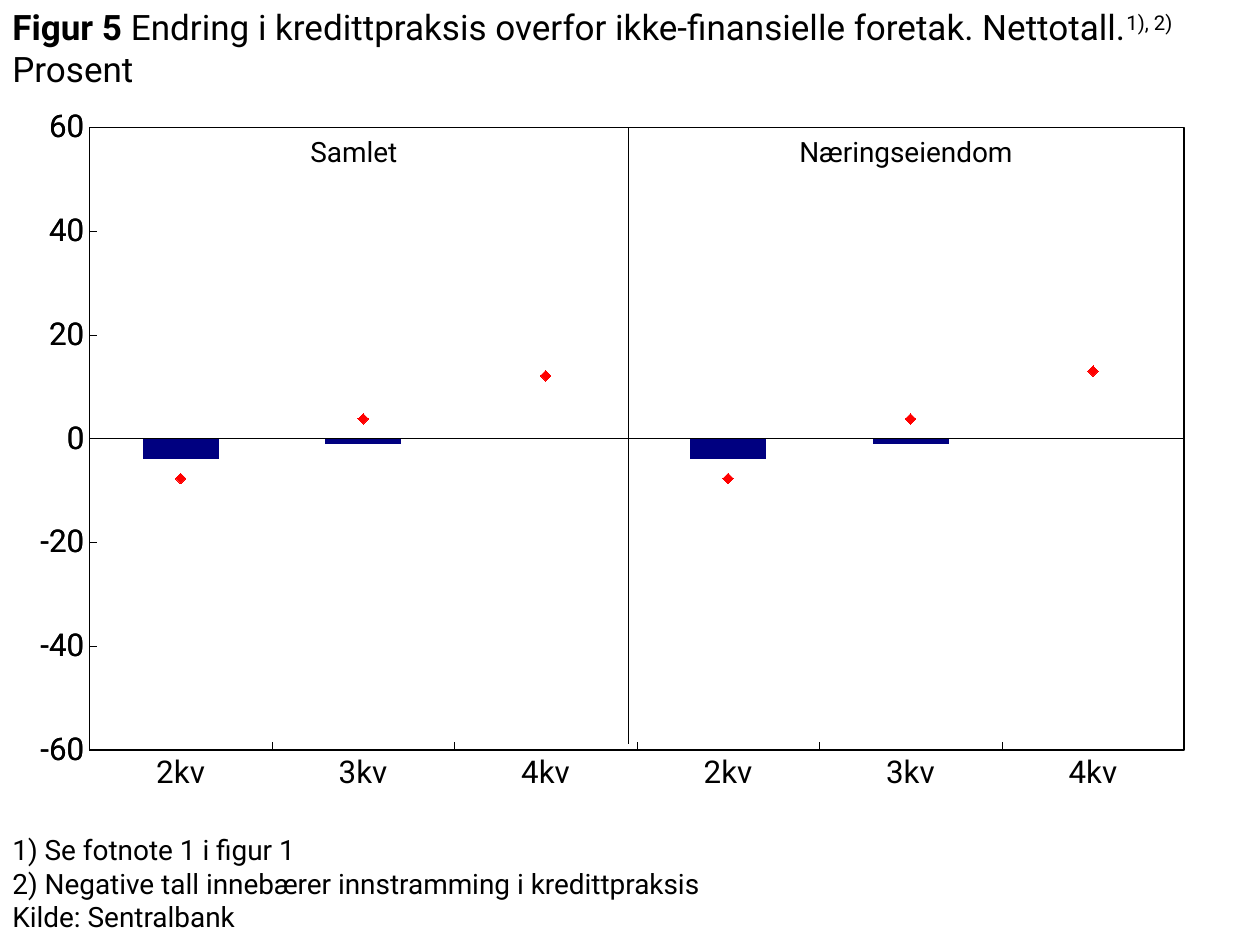
from copy import deepcopy

from lxml import etree
from pptx import Presentation
from pptx import util as u
from pptx.chart import axis as ax
from pptx.chart import data as chart_data
from pptx.dml.color import RGBColor
from pptx.enum import chart as ch
from pptx.enum import shapes, text
from pptx.oxml import parse_xml
from pptx.oxml.ns import nsdecls, qn

COLORS = {"ink": "000000", "bar": "000080", "marker": "FF0000"}
FONT = "Roboto"
QUARTERS = ["2kv", "3kv", "4kv"]
BARS = [-4, -1, None]
EMPTY = [None] * 3
SERIES = [BARS + EMPTY, EMPTY + BARS,
          [-7.7, 3.8, 12.1] + EMPTY, EMPTY + [-7.7, 3.8, 13]]


def apply_format(target, **values):
    for name, value in values.items():
        setattr(target, name, value)


def rgb(name):
    return RGBColor.from_string(COLORS[name])


class SlideBuilder:
    def __init__(self, slide):
        self.slide = slide

    def style_font(self, font, size, bold=False):
        apply_format(font, name=FONT, size=u.Pt(size), bold=bold)
        font.color.rgb = rgb("ink")

    def style_line(self, line, width):
        line.color.rgb = rgb("ink")
        line.width = u.Pt(width)

    def text_box(self, box, paragraphs, size, align=text.PP_ALIGN.LEFT,
                 anchor=text.MSO_ANCHOR.TOP):
        """Each paragraph is a list of (wording, bold, superscript) runs."""
        shape = self.slide.shapes.add_textbox(*map(u.Cm, box))
        frame = shape.text_frame
        apply_format(frame, word_wrap=True, vertical_anchor=anchor)
        for index, runs in enumerate(paragraphs):
            paragraph = frame.add_paragraph() if index else frame.paragraphs[0]
            paragraph.alignment = align
            for wording, bold, superscript in runs:
                run = paragraph.add_run()
                run.text = wording
                self.style_font(run.font, size, bold)
                if superscript:
                    run._r.get_or_add_rPr().set("baseline", "30000")

    def line(self, *ends, width):
        connector = self.slide.shapes.add_connector(
            shapes.MSO_CONNECTOR.STRAIGHT, *map(u.Cm, ends))
        self.style_line(connector.line, width)
        etree.SubElement(connector._element.spPr, qn("a:effectLst"))

    def chart(self, box, layout):
        data = chart_data.CategoryChartData()
        data.categories = QUARTERS * 2
        for number, values in enumerate(SERIES, 1):
            data.add_series(f"Series {number}", values)
        chart = self.slide.shapes.add_chart(
            ch.XL_CHART_TYPE.COLUMN_CLUSTERED, *map(u.Cm, box), data).chart
        apply_format(chart, has_legend=False, has_title=False)
        self.style_font(chart.font, 17.9)
        apply_format(chart.plots[0], gap_width=140, overlap=100,
                     vary_by_categories=False)
        self.style_axes(chart)
        self.add_marker_plot(chart)
        self.style_plot_area(chart, layout)

        # Bars and diamonds
        bars, points = chart.plots
        for series in bars.series:
            series.invert_if_negative = False
            series.format.fill.solid()
            series.format.fill.fore_color.rgb = rgb("bar")
        for series in points.series:
            series.smooth = False
            series.format.line.fill.background()
            apply_format(series.marker, style=ch.XL_MARKER_STYLE.DIAMOND, size=6)
            series.marker.format.fill.solid()
            series.marker.format.fill.fore_color.rgb = rgb("marker")
            series.marker.format.line.color.rgb = rgb("marker")

    def style_axes(self, chart):
        apply_format(chart.category_axis,
                     major_tick_mark=ch.XL_TICK_MARK.NONE,
                     tick_label_position=ch.XL_TICK_LABEL_POSITION.NONE)
        apply_format(chart.value_axis, minimum_scale=-60, maximum_scale=60,
                     major_unit=20, major_tick_mark=ch.XL_TICK_MARK.INSIDE,
                     tick_label_position=ch.XL_TICK_LABEL_POSITION.NEXT_TO_AXIS)
        apply_format(chart.value_axis.tick_labels, number_format="0",
                     number_format_is_linked=False)
        for axis in (chart.category_axis, chart.value_axis):
            apply_format(axis, has_major_gridlines=False,
                         minor_tick_mark=ch.XL_TICK_MARK.NONE)
            self.style_line(axis.format.line, 0.25)
            self.style_font(axis.tick_labels.font, 17.9)

    def add_marker_plot(self, chart):
        """Move the last two series to a line plot with bottom and right axes."""
        area = chart._chartSpace.chart.plotArea
        bar_plot = area.find(qn("c:barChart"))
        line_plot = parse_xml(
            f'<c:lineChart {nsdecls("c")}><c:grouping val="standard"/>'
            '<c:varyColors val="0"/><c:marker val="1"/>'
            '<c:axId val="5001"/><c:axId val="5002"/></c:lineChart>')
        for series in bar_plot.findall(qn("c:ser"))[2:]:
            for flag in series.findall(qn("c:invertIfNegative")):
                series.remove(flag)
            line_plot.find(qn("c:marker")).addprevious(series)
        bar_plot.addnext(line_plot)

        copies = []
        last = area.find(qn("c:valAx"))
        for tag, own, other, side in (("c:valAx", "5002", "5001", "r"),
                                      ("c:catAx", "5001", "5002", "b")):
            axis = deepcopy(area.find(qn(tag)))
            for child, value in (("c:axId", own), ("c:crossAx", other),
                                 ("c:axPos", side)):
                axis.find(qn(child)).set("val", value)
            last.addnext(axis)
            last = axis
            copies.append(axis)
        right_axis = ax.ValueAxis(copies[0])
        bottom_axis = ax.CategoryAxis(copies[1])
        right_axis.crosses = ch.XL_AXIS_CROSSES.MINIMUM
        apply_format(bottom_axis, crosses=ch.XL_AXIS_CROSSES.MAXIMUM,
                     major_tick_mark=ch.XL_TICK_MARK.INSIDE,
                     tick_label_position=ch.XL_TICK_LABEL_POSITION.NEXT_TO_AXIS)

    def style_plot_area(self, chart, layout):
        area = chart._chartSpace.chart.plotArea
        for old in area.findall(qn("c:layout")):
            area.remove(old)
        sizes = "".join(f'<c:{key} val="{value}"/>'
                        for key, value in zip("xywh", layout))
        area.insert(0, parse_xml(
            f'<c:layout {nsdecls("c")}><c:manualLayout>'
            '<c:layoutTarget val="inner"/><c:xMode val="edge"/>'
            f'<c:yMode val="edge"/>{sizes}</c:manualLayout></c:layout>'))
        area.append(parse_xml(
            f'<c:spPr {nsdecls("c", "a")}><a:noFill/><a:ln w="12700"><a:solidFill>'
            f'<a:srgbClr val="{COLORS["ink"]}"/></a:solidFill></a:ln></c:spPr>'))


def main():
    presentation = Presentation()
    apply_format(presentation, slide_width=u.Cm(25.4), slide_height=u.Cm(19.05))
    builder = SlideBuilder(
        presentation.slides.add_slide(presentation.slide_layouts[6]))

    # Chart
    builder.chart((0, 2.18, 25.4, 14.94), (0.071, 0.026, 0.869, 0.84))

    # Footnotes
    notes = ["1) Se fotnote 1 i figur 1",
             "2) Negative tall innebærer innstramming i kredittpraksis",
             "Kilde: Sentralbank"]
    builder.text_box((0, 16.66, 21.44, 2.39),
                     [[(note, False, False)] for note in notes], 16)

    # Panel headings and divider
    for left, heading in ((1.57, "Samlet"), (12.7, "Næringseiendom")):
        builder.text_box((left, 2.59, 11.13, 0.94), [[(heading, False, False)]],
                         16, text.PP_ALIGN.CENTER)
    builder.line(12.67, 14.99, 12.67, 2.59, width=0.75)

    # Title
    builder.text_box(
        (0, 0, 24.74, 1.93),
        [[("Figur 5 ", True, False),
          ("Endring i kredittpraksis overfor ikke-finansielle foretak. Nettotall.",
           False, False),
          ("1), 2)", False, True), (" Prosent", False, False)]],
        20, anchor=text.MSO_ANCHOR.MIDDLE)

    presentation.save("out.pptx")


if __name__ == "__main__":
    main()
